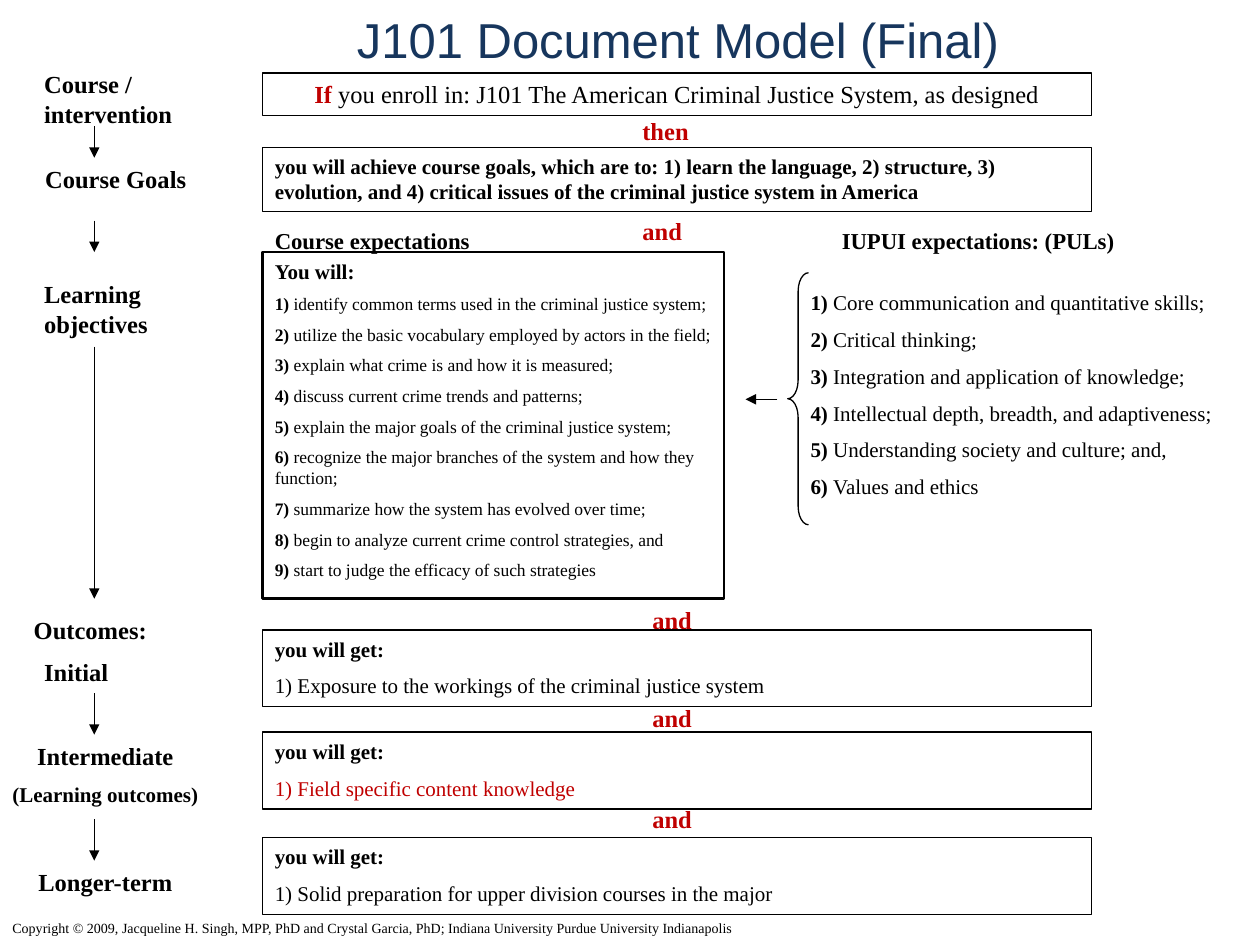
from dataclasses import dataclass

from lxml import etree
from pptx import Presentation
from pptx import util as u
from pptx.dml.color import RGBColor
from pptx.enum import shapes, text
from pptx.oxml import ns

BLACK = RGBColor(0x00, 0x00, 0x00)
RED = RGBColor(0xC0, 0x00, 0x00)
NAVY = RGBColor(0x17, 0x36, 0x5D)
SERIF = "Times New Roman"
SPACING = 0.55  # space before a paragraph, as a share of its text size
LEFT, WIDE = 5.29, 16.72  # the main column, cm
FLOW_X = 1.9
LABEL_H = 0.86
BOX_H = 1.55


@dataclass
class Run:
    text: str
    bold: bool = True
    size: float = 14
    color: RGBColor = BLACK


@dataclass
class Block:
    """Paragraphs of runs at a place given in cm."""
    x: float
    y: float
    w: float
    h: float
    paragraphs: list[list[Run]]
    centered: bool = False
    framed: bool = False


@dataclass
class Arrow:
    x1: float
    y1: float
    x2: float
    y2: float


def label(x: float, y: float, w: float, words: str, size: float = 14,
          color: RGBColor = BLACK, h: float = LABEL_H, centered: bool = False) -> Block:
    return Block(x, y, w, h, [[Run(words, size=size, color=color)]], centered)


def numbered(items: list[str], size: float) -> list[list[Run]]:
    return [[Run(f"{i}) ", True, size), Run(item, False, size)]
            for i, item in enumerate(items, 1)]


def outcome(y: float, words: str, color: RGBColor = BLACK) -> Block:
    return Block(LEFT, y, WIDE, BOX_H, [[Run("you will get:", size=12)],
                                        [Run(words, False, 12, color)]], framed=True)


def set_font(r, **values) -> None:
    color = values.pop("color")
    for name, value in values.items():
        setattr(r.font, name, value)
    r.font.color.rgb = color


def add_outline(s, kind, x: float, y: float, w: float, h: float, weight: float = 0.75):
    sp = s.shapes.add_shape(kind, u.Cm(x), u.Cm(y), u.Cm(w), u.Cm(h))
    sp.shadow.inherit = False
    sp.fill.background()
    sp.line.color.rgb = BLACK
    sp.line.width = u.Pt(weight)
    return sp


def add_block(s, b: Block) -> None:
    if b.framed:
        sp = add_outline(s, shapes.MSO_SHAPE.RECTANGLE, b.x, b.y, b.w, b.h)
    else:
        sp = s.shapes.add_textbox(u.Cm(b.x), u.Cm(b.y), u.Cm(b.w), u.Cm(b.h))
    tf = sp.text_frame
    tf.word_wrap = True
    tf.vertical_anchor = text.MSO_ANCHOR.TOP
    for i, runs in enumerate(b.paragraphs):
        p = tf.add_paragraph() if i else tf.paragraphs[0]
        p.alignment = text.PP_ALIGN.CENTER if b.centered else text.PP_ALIGN.LEFT
        if i:
            p.space_before = u.Pt(runs[0].size * SPACING)
        for run in runs:
            r = p.add_run()
            r.text = run.text
            set_font(r, name=SERIF, size=u.Pt(run.size), bold=run.bold, color=run.color)


def add_arrow(s, a: Arrow) -> None:
    c = s.shapes.add_connector(shapes.MSO_CONNECTOR.STRAIGHT,
                               u.Cm(a.x1), u.Cm(a.y1), u.Cm(a.x2), u.Cm(a.y2))
    c.line.color.rgb = BLACK
    c.line.width = u.Pt(0.75)
    etree.SubElement(c.line._get_or_add_ln(), ns.qn("a:tailEnd"), type="triangle")
    etree.SubElement(c._element.spPr, ns.qn("a:effectLst"))


OBJECTIVES = [
    "identify common terms used in the criminal justice system;",
    "utilize the basic vocabulary employed by actors in the field;",
    "explain what crime is and how it is measured;",
    "discuss current crime trends and patterns;",
    "explain the major goals of the criminal justice system;",
    "recognize the major branches of the system and how they function;",
    "summarize how the system has evolved over time;",
    "begin to analyze current crime control strategies, and",
    "start to judge the efficacy of such strategies",
]
PRINCIPLES = [
    "Core communication and quantitative skills;",
    "Critical thinking;",
    "Integration and application of knowledge;",
    "Intellectual depth, breadth, and adaptiveness;",
    "Understanding society and culture; and,",
    "Values and ethics",
]
STAGES = [
    label(0.64, 1.27, 4.01, "Course / intervention", h=1.45),
    label(0.66, 3.18, 3.61, "Course Goals"),
    label(0.64, 5.51, 3.61, "Learning objectives", h=1.45),
    label(0.43, 12.27, 4.01, "Outcomes:"),
    label(0.64, 13.13, 1.95, "Initial"),
    Block(-0.2, 14.81, 4.65, 1.63, [[Run("Intermediate")],
                                    [Run("(Learning outcomes)", size=12)]], True),
    label(-0.2, 17.35, 4.65, "Longer-term", centered=True),
]
LINKS = [label(x, y, 1.9, words, color=RED) for x, y, words in [
    (12.7, 2.21, "then"), (12.7, 4.24, "and"), (12.9, 12.07, "and"),
    (12.9, 14.05, "and"), (12.9, 16.08, "and")]]
CONTENT = [
    Block(LEFT, 1.47, WIDE, LABEL_H, [[
        Run("If ", color=RED),
        Run("you enroll in: J101 The American Criminal Justice System, as designed", False),
    ]], True, True),
    Block(LEFT, 2.97, WIDE, 1.3, [[Run(
        "you will achieve course goals, which are to: 1) learn the language, 2) structure, "
        "3) evolution, and 4) critical issues of the criminal justice system in America",
        size=12)]], framed=True),
    label(LEFT, 4.45, 4.88, "Course expectations", 13),
    label(16.72, 4.45, 6.15, "IUPUI expectations: (PULs)", 13),
    Block(LEFT, 5.08, 9.73, 6.96, [[Run("You will:", size=12)], *numbered(OBJECTIVES, 10)]),
    Block(16.09, 5.72, 9.73, 4.6, numbered(PRINCIPLES, 12)),
    outcome(12.7, "1) Exposure to the workings of the criminal justice system"),
    outcome(14.76, "1) Field specific content knowledge", RED),
    outcome(16.88, "1) Solid preparation for upper division courses in the major"),
    Block(0, 18.42, 19.05, 0.6, [[Run(
        "Copyright © 2009, Jacqueline H. Singh, MPP, PhD and Crystal Garcia, PhD; "
        "Indiana University Purdue University Indianapolis", False, 8)]]),
]
FLOW = [(2.54, 3.18), (4.45, 5.08), (6.99, 12.07), (13.97, 14.81), (16.51, 17.35)]
ARROWS = [Arrow(FLOW_X, y1, FLOW_X, y2) for y1, y2 in FLOW] + [Arrow(15.67, 8.05, 15.03, 8.05)]


def add_title(s, words: str) -> None:
    sp = s.shapes.title
    place = {"left": 4.24, "top": 0, "width": 18.85, "height": 1.57}
    for name, value in place.items():
        setattr(sp, name, u.Cm(value))
    tf = sp.text_frame
    tf.auto_size = text.MSO_AUTO_SIZE.NONE
    tf.vertical_anchor = text.MSO_ANCHOR.MIDDLE
    p = tf.paragraphs[0]
    p.alignment = text.PP_ALIGN.CENTER
    r = p.add_run()
    r.text = words
    set_font(r, name="Arial", size=u.Pt(28), bold=False, color=NAVY)


def main() -> None:
    prs = Presentation()
    prs.slide_width, prs.slide_height = u.Cm(25.4), u.Cm(19.05)
    s = prs.slides.add_slide(prs.slide_layouts[5])
    add_title(s, "J101 Document Model (Final)")
    for b in STAGES + LINKS + CONTENT:
        add_block(s, b)
    for a in ARROWS:
        add_arrow(s, a)
    add_outline(s, shapes.MSO_SHAPE.RECTANGLE, LEFT, 5.08, 9.31, 6.99, 1.5)
    brace = add_outline(s, shapes.MSO_SHAPE.LEFT_BRACE, 15.88, 5.5, 0.42, 5.08)
    brace.adjustments[0] = 0.89
    prs.save("out.pptx")


if __name__ == "__main__":
    main()
